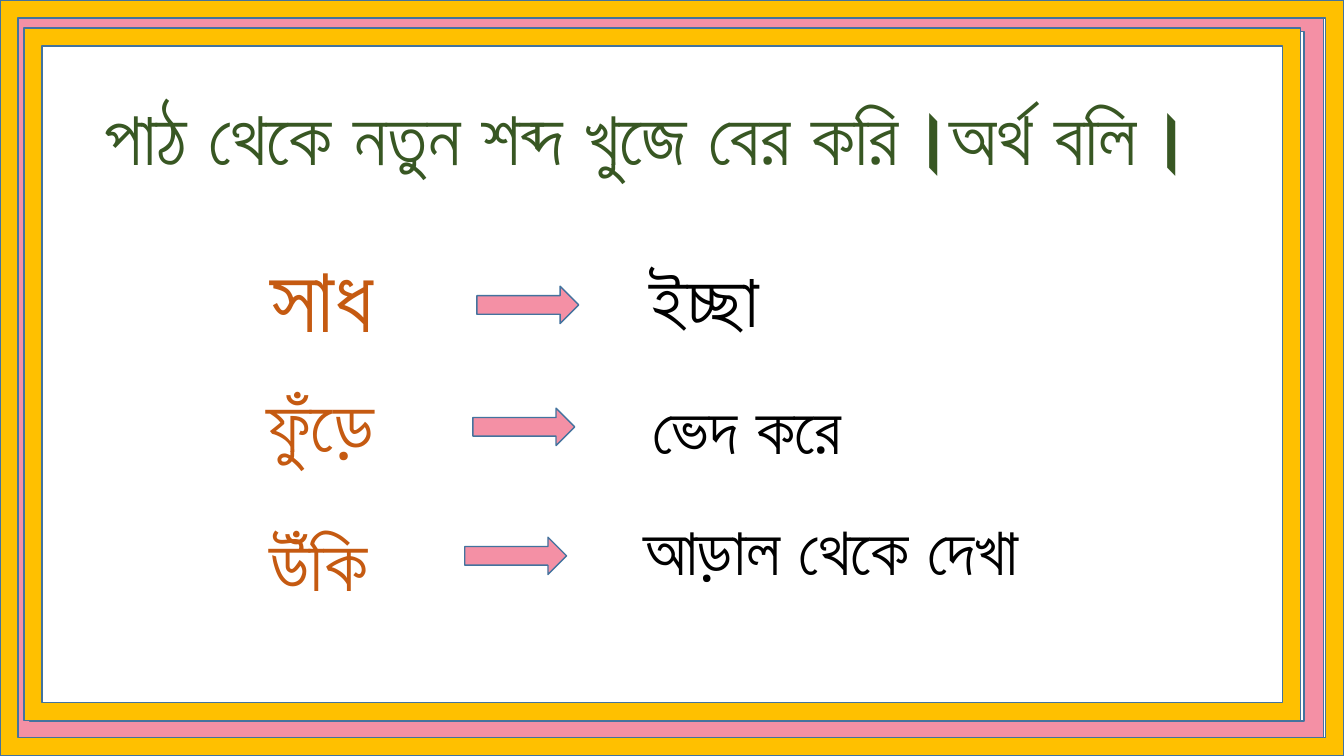
from dataclasses import dataclass

from pptx import Presentation
from pptx.dml.color import RGBColor
from pptx.enum.lang import MSO_LANGUAGE_ID
from pptx.enum.shapes import MSO_SHAPE
from pptx.enum.text import MSO_ANCHOR, MSO_AUTO_SIZE, PP_ALIGN
from pptx.oxml import parse_xml
from pptx.oxml.ns import nsdecls
from pptx.shapes.autoshape import Shape
from pptx.slide import Slide
from pptx.util import Emu, Pt

FONT = "Arial"
COLORS = {
    "gold": "FFC000",
    "pink": "F490A5",
    "edge": "43739E",
    "title": "385723",
    "outline": "ED7D31",
    "word": "C55A11",
    "meaning": "000000",
}


def px(n: int) -> Emu:
    """Turn px, at 100 to the inch, into EMU."""
    return Emu(n * 9144)


def rgb(name: str) -> RGBColor:
    return RGBColor.from_string(COLORS[name])


@dataclass
class Box:
    left: int
    top: int
    width: int
    height: int

    def emu(self) -> list[Emu]:
        return [px(n) for n in (self.left, self.top, self.width, self.height)]


@dataclass
class Frame:
    box: Box
    thickness: float
    color: str


@dataclass
class Label:
    text: str
    box: Box
    size: int
    color: str
    bold: bool = True


@dataclass
class Entry:
    word: Label
    arrow: Box
    meaning: Label


FRAMES = [
    Frame(Box(-6, -7, 1340, 757), 0.024, "gold"),
    Frame(Box(10, 12, 1303, 723), 0.027, "pink"),
    Frame(Box(24, 28, 1266, 687), 0.026, "gold"),
    Frame(Box(0, 0, 1333, 750), 0.024, "gold"),
]
TITLE = Label("পাঠ থেকে নতুন শব্দ খুজে বের করি।অর্থ বলি।",
              Box(94, 84, 1115, 101), 54, "title")
ENTRIES = [
    Entry(Label("সাধ", Box(258, 233, 197, 121), 66, "word"),
          Box(473, 284, 101, 37),
          Label("ইচ্ছা", Box(634, 245, 249, 101), 54, "meaning")),
    Entry(Label("ফুঁড়ে", Box(254, 369, 201, 101), 54, "word"),
          Box(469, 405, 101, 37),
          Label("ভেদ করে", Box(637, 379, 290, 91), 48, "meaning")),
    Entry(Label("উঁকি", Box(257, 507, 157, 101), 54, "word", bold=False),
          Box(461, 533, 101, 37),
          Label("আড়াল থেকে দেখা", Box(628, 499, 507, 91), 48, "meaning")),
]


def add_filled(s: Slide, kind: MSO_SHAPE, box: Box, color: str) -> Shape:
    sp = s.shapes.add_shape(kind, *box.emu())
    sp.shadow.inherit = False
    sp.fill.solid()
    sp.fill.fore_color.rgb = rgb(color)
    sp.line.color.rgb = rgb("edge")
    sp.line.width = Pt(1)
    return sp


def write_label(sp: Shape, label: Label) -> None:
    tf = sp.text_frame
    tf.text = label.text
    tf.word_wrap = True
    tf.auto_size = MSO_AUTO_SIZE.SHAPE_TO_FIT_TEXT
    tf.vertical_anchor = MSO_ANCHOR.TOP
    p = tf.paragraphs[0]
    p.alignment = PP_ALIGN.LEFT
    font = p.runs[0].font
    font.name = FONT
    font.size = Pt(label.size)
    font.bold = label.bold
    font.color.rgb = rgb(label.color)
    font.language_id = MSO_LANGUAGE_ID.ENGLISH_US


def add_label(s: Slide, label: Label) -> None:
    write_label(s.shapes.add_textbox(*label.box.emu()), label)


def set_title(s: Slide, label: Label) -> None:
    sp = s.shapes.title
    sp.left, sp.top, sp.width, sp.height = label.box.emu()
    write_label(sp, label)
    outline = parse_xml(
        f'<a:ln {nsdecls("a")} w="{Pt(1.75)}"><a:solidFill>'
        f'<a:srgbClr val="{COLORS["outline"]}"/></a:solidFill></a:ln>')
    r = sp.text_frame.paragraphs[0].runs[0]
    r._r.get_or_add_rPr().insert(0, outline)


def main() -> None:
    prs = Presentation()
    prs.slide_width, prs.slide_height = px(1333), px(750)
    s = prs.slides.add_slide(prs.slide_layouts.get_by_name("Title Only"))
    for frame in FRAMES:
        sp = add_filled(s, MSO_SHAPE.FRAME, frame.box, frame.color)
        sp.adjustments[0] = frame.thickness
    set_title(s, TITLE)
    for entry in ENTRIES:
        add_label(s, entry.word)
        add_filled(s, MSO_SHAPE.RIGHT_ARROW, entry.arrow, "pink")
        add_label(s, entry.meaning)
    prs.save("out.pptx")


if __name__ == "__main__":
    main()
